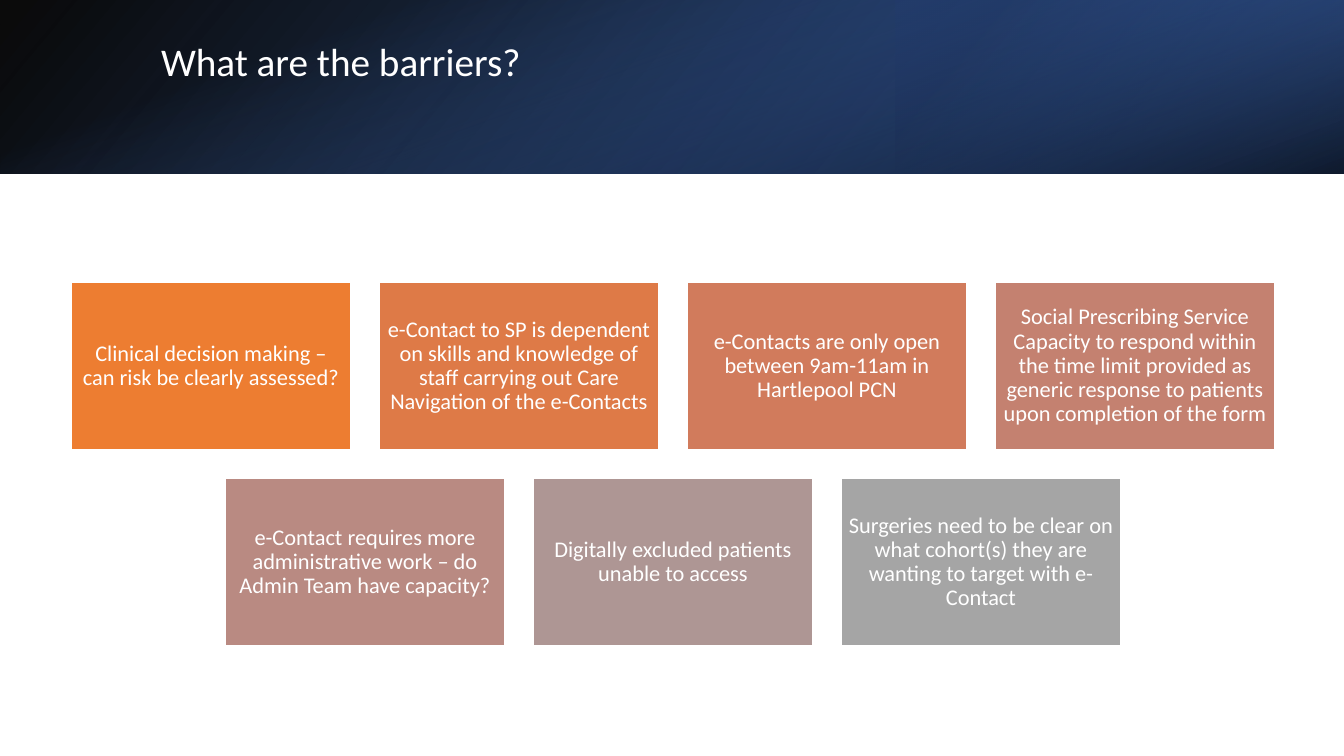
from dataclasses import dataclass

from pptx import Presentation
from pptx.dml.color import RGBColor
from pptx.enum.shapes import MSO_SHAPE
from pptx.enum.text import MSO_ANCHOR, PP_ALIGN
from pptx.oxml import parse_xml
from pptx.oxml.ns import nsdecls
from pptx.util import Pt

SLIDE_W, SLIDE_H = 1344, 756
BANNER_H = 174
CARD_W, CARD_H = 280, 168
PITCH_X, PITCH_Y = 308, 196
CARDS_LEFT, CARDS_TOP = 71, 282
COLUMNS = 4


@dataclass(frozen=True)
class Theme:
    font: str = "Calibri"
    title_size: int = 28
    card_size: int = 16
    white: str = "FFFFFF"
    black: str = "000000"
    blue: str = "4472C4"
    mid_blue: str = "2F5597"
    navy: str = "203864"


THEME = Theme()

BARRIERS = [
    ("Clinical decision making – can risk be clearly assessed?", "ED7D31"),
    ("e-Contact to SP is dependent on skills and knowledge of staff "
     "carrying out Care Navigation of the e-Contacts", "DE7A47"),
    ("e-Contacts are only open between 9am-11am in Hartlepool PCN", "D17B5C"),
    ("Social Prescribing Service Capacity to respond within the time limit "
     "provided as generic response to patients upon completion of the form", "C48170"),
    ("e-Contact requires more administrative work – "
     "do Admin Team have capacity?", "B98A82"),
    ("Digitally excluded patients unable to access", "AE9694"),
    ("Surgeries need to be clear on what cohort(s) they are wanting "
     "to target with e-Contact", "A5A5A5"),
]


def px(n):
    """Turn pixels at 100.8 to the inch into EMU."""
    return round(n * 914400 / 100.8)


def write(sp, text, size, align=PP_ALIGN.LEFT, anchor=MSO_ANCHOR.MIDDLE, inset=(7, 7)):
    """Fill a shape with one paragraph; inset is (horizontal, vertical) px."""
    tf = sp.text_frame
    tf.word_wrap = True
    tf.vertical_anchor = anchor
    tf.margin_left = tf.margin_right = px(inset[0])
    tf.margin_top = tf.margin_bottom = px(inset[1])
    p = tf.paragraphs[0]
    p.alignment = align
    p.line_spacing = 0.9
    r = p.add_run()
    r.text = text
    r.font.name = THEME.font
    r.font.size = Pt(size)
    r.font.color.rgb = RGBColor.from_string(THEME.white)


def add_rect(s, x, y, w, h):
    sp = s.shapes.add_shape(MSO_SHAPE.RECTANGLE, px(x), px(y), px(w), px(h))
    sp.shadow.inherit = False
    return sp


def add_gradient_rect(s, box, stops, angle, rotation=0, flip=False):
    """Stops are (position %, colour, opacity %); the angle is in degrees."""
    sp = add_rect(s, *box)
    sp.line.fill.background()
    sp.rotation = rotation
    sp_pr = sp._element.spPr
    if flip:
        sp_pr.xfrm.set("flipH", "1")
    gs = "".join(
        f'<a:gs pos="{pos * 1000}"><a:srgbClr val="{color}">'
        f'<a:alpha val="{opacity * 1000}"/></a:srgbClr></a:gs>'
        for pos, color, opacity in stops)
    gradient = parse_xml(
        f'<a:gradFill rotWithShape="1" {nsdecls("a")}><a:gsLst>{gs}</a:gsLst>'
        f'<a:lin ang="{angle * 60000}" scaled="0"/></a:gradFill>')
    sp_pr.prstGeom.addnext(gradient)


def add_banner(s):
    t = THEME
    add_gradient_rect(s, (0, 0, SLIDE_W, BANNER_H),
                      [(0, t.black, 96), (100, t.mid_blue, 100)], 140, flip=True)
    third = SLIDE_W // 3
    add_gradient_rect(s, (SLIDE_W - third, 0, third, BANNER_H),
                      [(19, t.navy, 68), (100, t.blue, 79)], 320, rotation=180, flip=True)
    shift = (SLIDE_W - BANNER_H) // 2
    add_gradient_rect(s, (shift, -shift, BANNER_H, SLIDE_W),
                      [(23, t.blue, 0), (99, t.black, 74)], 340, rotation=90)


def add_title(s, text):
    sp = s.shapes.add_textbox(px(151), px(38), px(1107), px(97))
    write(sp, text, THEME.title_size, anchor=MSO_ANCHOR.TOP, inset=(10, 5))


def add_card(s, x, y, text, color):
    sp = add_rect(s, x, y, CARD_W, CARD_H)
    sp.fill.solid()
    sp.fill.fore_color.rgb = RGBColor.from_string(color)
    sp.line.color.rgb = RGBColor.from_string(THEME.white)
    sp.line.width = Pt(1)
    write(sp, text, THEME.card_size, align=PP_ALIGN.CENTER)


def add_cards(s, barriers):
    """Lay the cards out in rows, centring a row that is not full."""
    for i, (text, color) in enumerate(barriers):
        row, col = divmod(i, COLUMNS)
        in_row = min(COLUMNS, len(barriers) - row * COLUMNS)
        indent = (COLUMNS - in_row) * PITCH_X // 2
        add_card(s, CARDS_LEFT + indent + col * PITCH_X,
                 CARDS_TOP + row * PITCH_Y, text, color)


def main():
    prs = Presentation()
    prs.slide_width, prs.slide_height = px(SLIDE_W), px(SLIDE_H)
    s = prs.slides.add_slide(prs.slide_layouts[6])
    add_banner(s)
    add_title(s, "What are the barriers?")
    add_cards(s, BARRIERS)
    prs.save("out.pptx")


if __name__ == "__main__":
    main()
